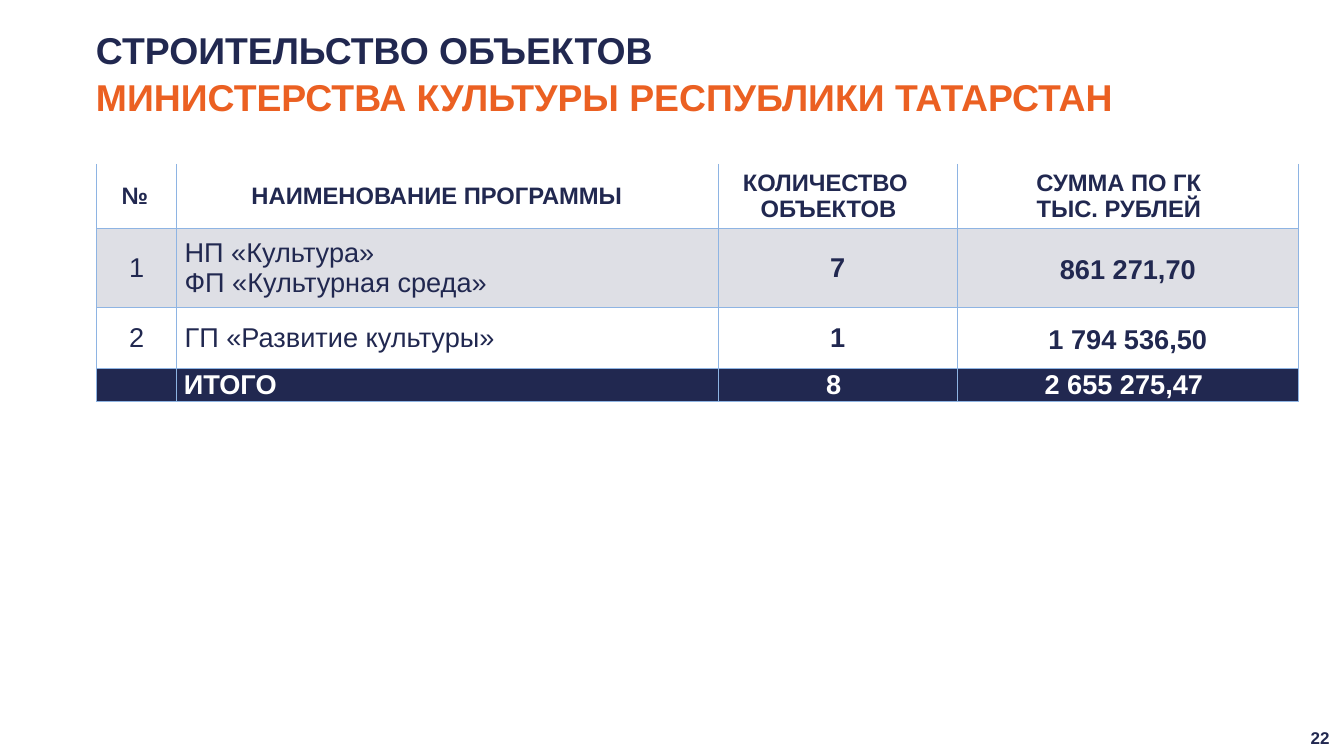
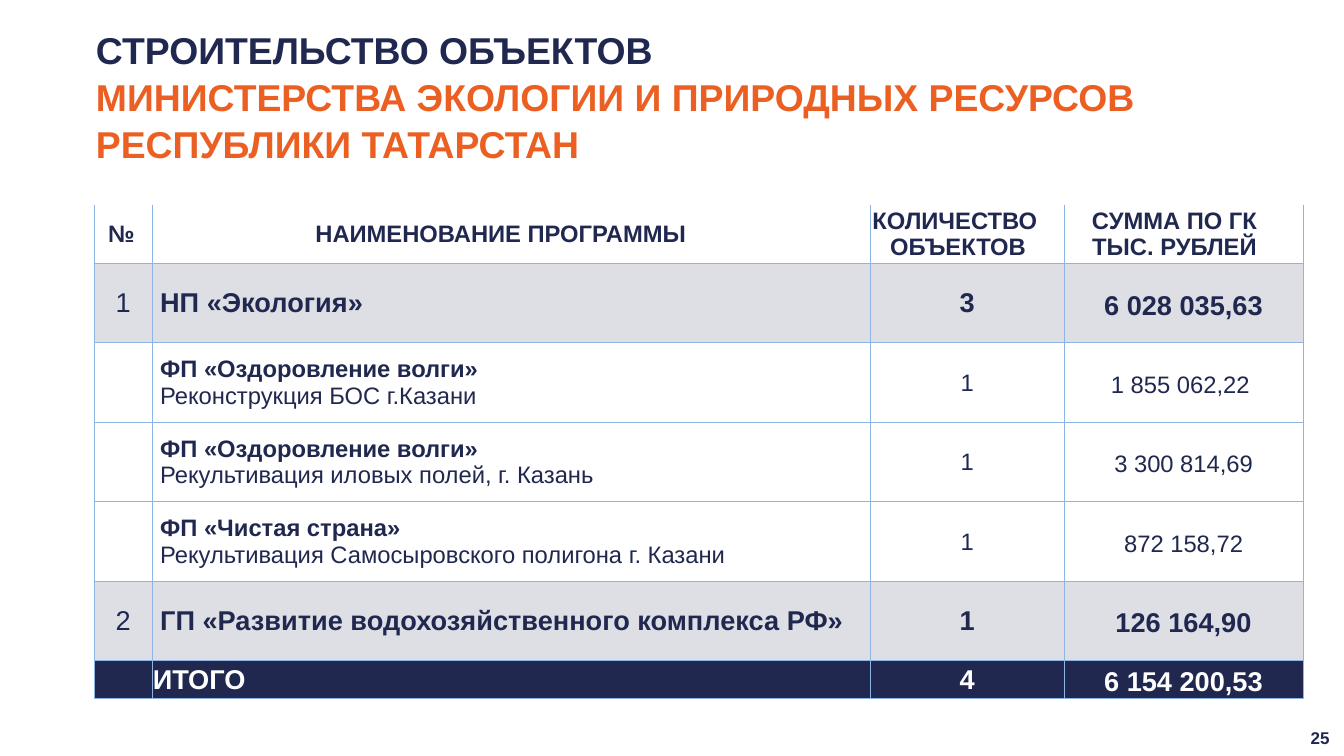
"""Builds two slides on construction projects by ministry."""
from dataclasses import dataclass

from lxml import etree
from pptx import Presentation
from pptx import util as u
from pptx.dml.color import RGBColor
from pptx.enum import shapes, text
from pptx.oxml.ns import qn

NAVY = RGBColor(0x21, 0x28, 0x50)
ORANGE = RGBColor(0xEB, 0x60, 0x22)
GRAY = RGBColor(0xDE, 0xDF, 0xE5)
WHITE = RGBColor(0xFF, 0xFF, 0xFF)
BORDER = RGBColor(0x8E, 0xB4, 0xE3)

LEFT, CENTER = text.PP_ALIGN.LEFT, text.PP_ALIGN.CENTER
NAME_COLUMN, SUM_COLUMN = 1, 3
BODY_MARGINS = [(0.01, 0.01), (0.13, 0.01), (0.01, 0.01), (0.01, 0.01)]
HEADER_MARGINS = [(0.1, 0.16), (0, 0.35), (0, 0.3), (0, 0.3)]


@dataclass
class Row:
    """One table row: each cell is a list of (text, bold) lines."""
    height: float
    cells: list
    fill: RGBColor = None
    size: int = 32
    color: RGBColor = NAVY
    margins: tuple = tuple(BODY_MARGINS)
    name_align: int = LEFT
    sum_spacing: float = 1.15


def header(height):
    """Return the heading row."""
    labels = [["№"], ["НАИМЕНОВАНИЕ ПРОГРАММЫ"],
              ["КОЛИЧЕСТВО ", "ОБЪЕКТОВ"], ["СУММА ПО ГК", "ТЫС. РУБЛЕЙ"]]
    cells = [[(line, True) for line in lines] for lines in labels]
    return Row(height, cells, size=28, margins=HEADER_MARGINS,
               name_align=CENTER, sum_spacing=1)


def program(number, name, count, total, bold=False, height=1.3, fill=GRAY):
    """Return the row of a numbered program."""
    return Row(height, [[(number, False)], [(name, bold)],
                        [(count, True)], [(total, True)]], fill)


def project(name, detail, total):
    """Return the row of one project within a program."""
    return Row(1.3, [[], [(name, True), (detail, False)],
                     [("1", False)], [(total, False)]], size=28)


def totals(height, count, total, **style):
    """Return the closing row."""
    cells = [[]] + [[(value, True)] for value in ("ИТОГО", count, total)]
    return Row(height, cells, NAVY, color=WHITE, **style)


class Deck:
    """Holds the style and the current slide."""

    def __init__(self):
        """Start an empty presentation."""
        self.presentation = Presentation()
        self.presentation.slide_width = u.Inches(21.99)
        self.presentation.slide_height = u.Inches(12.37)
        self.slide = None

    def add_text(self, paragraph, value, color=NAVY, **style):
        """Add a run in the deck's font."""
        run = paragraph.add_run()
        run.text = value
        run.font.color.rgb = color
        for key, setting in {"name": "Arial", "bold": True, **style}.items():
            setattr(run.font, key, setting)

    def add_slide(self, ministry, number, title_height):
        """Add a slide with its two-colour title and page number."""
        layout = self.presentation.slide_layouts[5]
        self.slide = self.presentation.slides.add_slide(layout)
        self.title(ministry, title_height)
        self.page_number(number)

    def title(self, ministry, height):
        """Fill the title placeholder."""
        title = self.slide.shapes.title
        place = {"left": 1.57, "top": 0.39, "width": 19.42, "height": height}
        for key, length in place.items():
            setattr(title, key, u.Inches(length))
        frame = title.text_frame
        settings = {"margin_left": 0, "margin_right": 0, "margin_bottom": 0,
                    "margin_top": u.Inches(0.02), "word_wrap": True,
                    "vertical_anchor": text.MSO_ANCHOR.TOP,
                    "auto_size": text.MSO_AUTO_SIZE.SHAPE_TO_FIT_TEXT}
        for key, setting in settings.items():
            setattr(frame, key, setting)
        paragraph = frame.paragraphs[0]
        paragraph.alignment = LEFT
        paragraph.line_spacing = 1.05
        self.add_text(paragraph, "СТРОИТЕЛЬСТВО ОБЪЕКТОВ", size=u.Pt(44))
        paragraph.add_line_break()
        self.add_text(paragraph, ministry, ORANGE, size=u.Pt(44))

    def page_number(self, number):
        """Draw the page number in the corner."""
        shape = self.slide.shapes.add_shape(
            shapes.MSO_SHAPE.ROUNDED_RECTANGLE, u.Inches(21.24),
            u.Inches(11.77), u.Inches(0.72), u.Inches(0.59))
        shape.shadow.inherit = False
        shape.fill.background()
        shape.line.fill.background()
        frame = shape.text_frame
        frame.vertical_anchor = text.MSO_ANCHOR.MIDDLE
        frame.paragraphs[0].alignment = CENTER
        self.add_text(frame.paragraphs[0], number, size=u.Pt(20))

    def borders(self, cell, has_top):
        """Outline a cell, leaving the top open in the heading row."""
        properties = cell._tc.get_or_add_tcPr()
        for index, side in enumerate(("lnL", "lnR", "lnT", "lnB")):
            line = etree.Element(qn(f"a:{side}"), w=str(u.Pt(1)))
            properties.insert(index, line)
            if side == "lnT" and not has_top:
                etree.SubElement(line, qn("a:noFill"))
                continue
            fill = etree.SubElement(line, qn("a:solidFill"))
            etree.SubElement(fill, qn("a:srgbClr"), val=str(BORDER))

    def cell(self, cell, row, column):
        """Fill and format one table cell."""
        left, right = row.margins[column]
        settings = {"margin_left": u.Inches(left),
                    "margin_right": u.Inches(right),
                    "margin_top": u.Inches(0.01), "margin_bottom": 0,
                    "vertical_anchor": text.MSO_ANCHOR.MIDDLE}
        for key, setting in settings.items():
            setattr(cell, key, setting)
        if row.fill is None:
            cell.fill.background()
        else:
            cell.fill.solid()
            cell.fill.fore_color.rgb = row.fill
        frame = cell.text_frame
        for index, (value, bold) in enumerate(row.cells[column]):
            paragraph = frame.add_paragraph() if index else frame.paragraphs[0]
            paragraph.alignment = (row.name_align if column == NAME_COLUMN
                                   else CENTER)
            if column == SUM_COLUMN:
                paragraph.line_spacing = row.sum_spacing
            for part, line in enumerate(value.split("\n")):
                if part:
                    paragraph.add_line_break()
                self.add_text(paragraph, line, row.color, bold=bold,
                              size=u.Pt(row.size))

    def table(self, left, top, widths, rows):
        """Add a table built from Row objects."""
        table = self.slide.shapes.add_table(
            len(rows), len(widths), u.Inches(left), u.Inches(top),
            u.Inches(sum(widths)),
            u.Inches(sum(row.height for row in rows))).table
        table.first_row = table.horz_banding = False
        for column, width in zip(table.columns, widths):
            column.width = u.Inches(width)
        for row_index, row in enumerate(rows):
            table.rows[row_index].height = u.Inches(row.height)
            for column in range(len(widths)):
                cell = table.cell(row_index, column)
                self.cell(cell, row, column)
                self.borders(cell, row_index > 0)


def main():
    """Build and save both slides."""
    deck = Deck()
    deck.add_slide("МИНИСТЕРСТВА КУЛЬТУРЫ РЕСПУБЛИКИ ТАТАРСТАН", "22", 1.5)
    deck.table(1.58, 2.68, [1.31, 8.86, 3.91, 5.59], [
        header(1.05),
        program("1", "НП «Культура»\nФП «Культурная среда»", "7", "861 271,70"),
        program("2", "ГП «Развитие культуры»", "1", "1 794 536,50",
                height=1, fill=None),
        totals(0.43, "8", "2 655 275,47", sum_spacing=1,
               margins=[(0, 0), (0.12, 0), (0, 0.13), (0, 0.13)]),
    ])

    deck.add_slide("МИНИСТЕРСТВА ЭКОЛОГИИ И ПРИРОДНЫХ РЕСУРСОВ "
                   "РЕСПУБЛИКИ ТАТАРСТАН", "25", 2.24)
    deck.table(1.54, 3.35, [0.95, 11.75, 3.17, 3.91], [
        header(0.96),
        program("1", "НП «Экология»", "3", "6 028 035,63", bold=True),
        project("ФП «Оздоровление волги»", "Реконструкция БОС г.Казани",
                "1 855 062,22 "),
        project("ФП «Оздоровление волги»",
                "Рекультивация иловых полей, г. Казань", "3 300 814,69"),
        project("ФП «Чистая страна»",
                "Рекультивация Самосыровского полигона г. Казани",
                "872 158,72"),
        program("2", "ГП «Развитие водохозяйственного комплекса РФ»", "1",
                "126 164,90", bold=True),
        totals(0.6, "4", "6 154 200,53", margins=[(0.01, 0.01)] * 4),
    ])
    deck.presentation.save("out.pptx")


if __name__ == "__main__":
    main()
